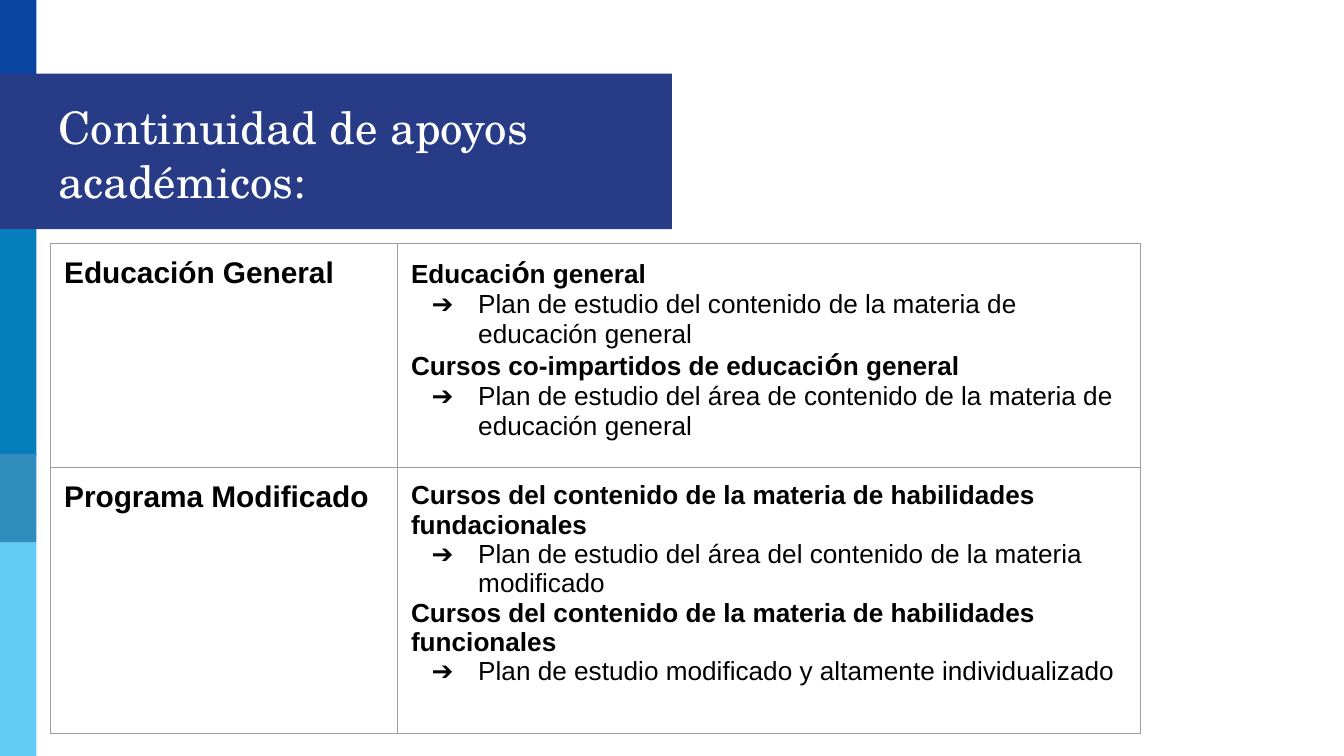
from lxml import etree
from pptx import Presentation
from pptx import util as u
from pptx.dml import color as c
from pptx.enum import shapes, text
from pptx.oxml import ns

Pt = u.Pt
HUES = {"top": "0944A1", "band": "273B87", "blue": "067EBC", "steel": "318DBD",
        "sky": "63CCF5", "grid": "9E9E9E", "ink": "000000", "white": "FFFFFF"}
PAD = 7.2


def add(host, tag, **vals):
    return etree.SubElement(host, ns.qn(tag), vals)


def write(para, words, size, hue="ink", face="Arial", bold=False):
    run = para.add_run()
    run.text = words
    for key, val in {"size": Pt(size), "name": face, "bold": bold}.items():
        setattr(run.font, key, val)
    run.font.color.rgb = c.RGBColor.from_string(HUES[hue])


deck = Presentation()
deck.slide_width, deck.slide_height = Pt(720), Pt(405)
slide = deck.slides.add_slide(deck.slide_layouts[6])

# Side strip and title band: top, width, height, colour
bars = [(0, 19.5, 41.8, "top"), (39.5, 360, 83.3, "band"), (122.8, 19.5, 121.5, "blue"),
        (243.2, 19.5, 47.5, "steel"), (290.7, 19.5, 114.3, "sky")]
for top, wide, high, hue in bars:
    bar = slide.shapes.add_shape(shapes.MSO_SHAPE.RECTANGLE, 0, Pt(top), Pt(wide), Pt(high))
    bar.shadow.inherit = False
    bar.fill.solid()
    bar.fill.fore_color.rgb = c.RGBColor.from_string(HUES[hue])
    bar.line.fill.background()

title = slide.shapes.add_textbox(Pt(24.2), Pt(41.8), Pt(319), Pt(80.6)).text_frame
frame = {"word_wrap": True, "vertical_anchor": text.MSO_ANCHOR.MIDDLE}
sides = ("left", "right", "top", "bottom")
for key, val in (frame | {f"margin_{side}": Pt(PAD) for side in sides}).items():
    setattr(title, key, val)
write(title.paragraphs[0], "Continuidad de apoyos académicos:", 24, "white", "TeX Gyre Schola")

# Each row: label, then pairs of course heading and plan
rows = [
    ("Educación General", [
        ("Educación general",
         "Plan de estudio del contenido de la materia de educación general"),
        ("Cursos co-impartidos de educación general",
         "Plan de estudio del área de contenido de la materia de educación general")]),
    ("Programa Modificado", [
        ("Cursos del contenido de la materia de habilidades fundacionales",
         "Plan de estudio del área del contenido de la materia modificado"),
        ("Cursos del contenido de la materia de habilidades funcionales",
         "Plan de estudio modificado y altamente individualizado")]),
]
wides, highs = (185.8, 398.2), (115.2, 142.5)
table = slide.shapes.add_table(2, 2, Pt(27.2), Pt(130.4), Pt(sum(wides)), Pt(sum(highs))).table
table.first_row = table.horz_banding = False
for col, wide in zip(table.columns, wides):
    col.width = Pt(wide)
for row, high in zip(table.rows, highs):
    row.height = Pt(high)

for cell in table.iter_cells():
    for side in sides:
        setattr(cell, f"margin_{side}", Pt(PAD))
    props = cell._tc.get_or_add_tcPr()
    for edge in "LRTB":
        line = add(props, f"a:ln{edge}", w=str(Pt(0.75)))
        add(add(line, "a:solidFill"), "a:srgbClr", val=HUES["grid"])
    cell.fill.background()

for i, (label, pairs) in enumerate(rows):
    write(table.cell(i, 0).text_frame.paragraphs[0], label, 16, bold=True)
    body = table.cell(i, 1).text_frame
    for j, (head, plan) in enumerate(pairs):
        para = body.add_paragraph() if j else body.paragraphs[0]
        start, accent, rest = head.partition("ó")
        for words, size in ((start, 14), (accent, 16), (rest, 14)):
            if words:
                write(para, words, size, bold=True)
        para = body.add_paragraph()
        props = para._p.get_or_add_pPr()
        props.set("marL", str(Pt(36)))
        props.set("indent", str(Pt(-25)))
        add(add(props, "a:buClr"), "a:srgbClr", val=HUES["ink"])
        add(props, "a:buFont", typeface="Arial")
        add(props, "a:buChar", char="➔")
        write(para, plan, 14)

deck.save("out.pptx")
